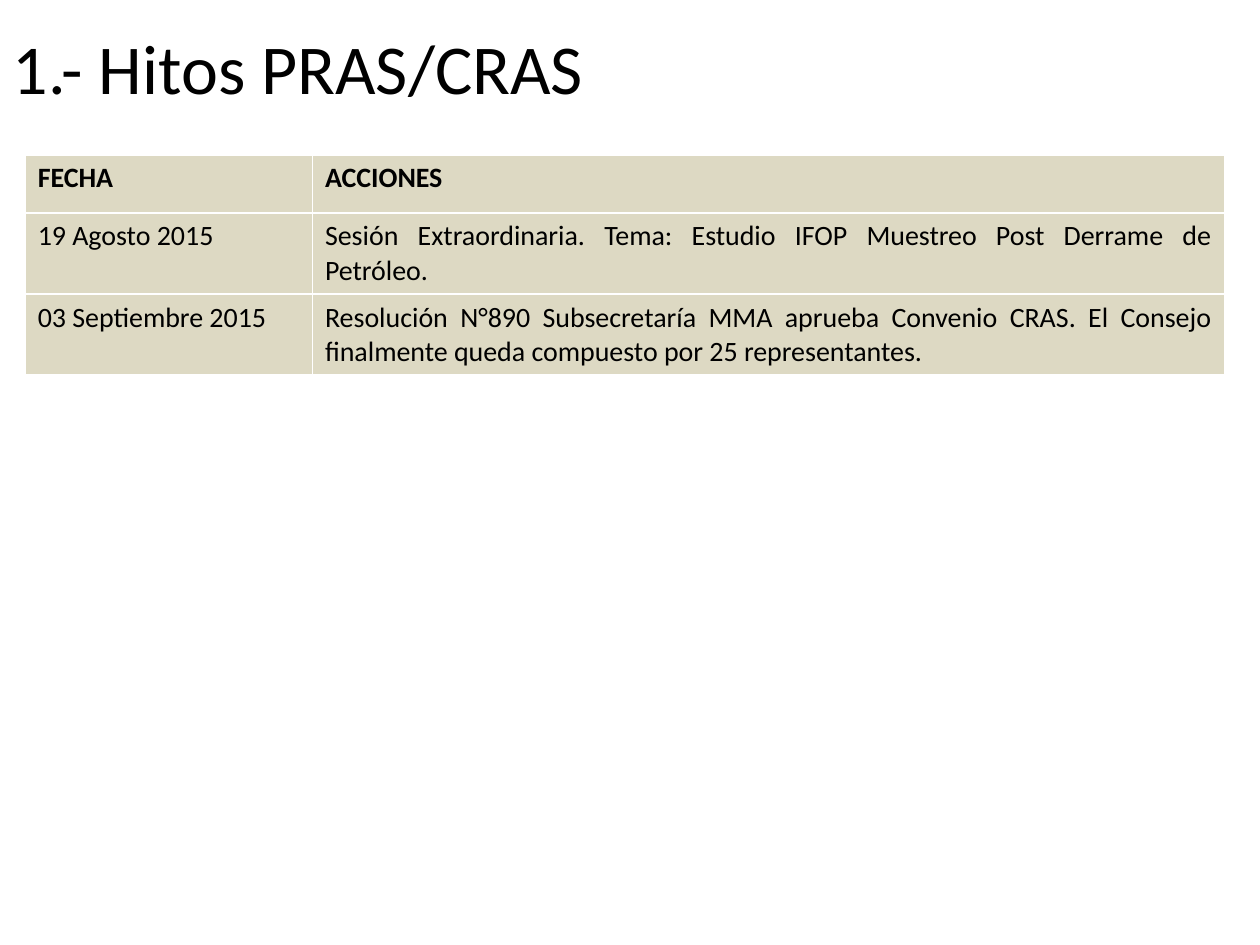
import pptx
import pptx.util
import pptx.dml.color
import pptx.enum.text

Inches = pptx.util.Inches
ALIGN = pptx.enum.text.PP_ALIGN
MIDDLE = pptx.enum.text.MSO_ANCHOR.MIDDLE
BLACK = pptx.dml.color.RGBColor(0x00, 0x00, 0x00)
SAND = pptx.dml.color.RGBColor(0xDD, 0xD9, 0xC3)


def write(frame, text, size=16, bold=False, align=ALIGN.LEFT):
    para = frame.paragraphs[0]
    para.alignment = align
    run = para.add_run()
    run.text = text
    font = run.font
    font.name = "Calibri"
    font.size = pptx.util.Pt(size)
    font.bold = bold
    font.color.rgb = BLACK


deck = pptx.Presentation()
deck.slide_width, deck.slide_height = Inches(10), Inches(7.5)
slide = deck.slides.add_slide(deck.slide_layouts[5])

# Title
title = slide.shapes.title
title.left, title.top = Inches(0), Inches(0.13)
title.width, title.height = Inches(7.76), Inches(0.79)
title.text_frame.vertical_anchor = MIDDLE
write(title.text_frame, "1.- Hitos PRAS/CRAS", size=40)

# Milestone table: the default style gives the white rules
rows = [
    ("FECHA", "ACCIONES"),
    ("19 Agosto 2015",
     "Sesión Extraordinaria. Tema: Estudio IFOP Muestreo Post Derrame de Petróleo."),
    ("03 Septiembre 2015",
     "Resolución N°890 Subsecretaría MMA aprueba Convenio CRAS. "
     "El Consejo finalmente queda compuesto por 25 representantes."),
]
widths = [2.28, 7.24]
heights = [0.46, 0.64, 0.64]
table = slide.shapes.add_table(
    len(rows), len(widths), Inches(0.2), Inches(1.23),
    Inches(sum(widths)), Inches(sum(heights))).table
table.horz_banding = False
for col, width in zip(table.columns, widths):
    col.width = Inches(width)

for r, (row, height) in enumerate(zip(rows, heights)):
    table.rows[r].height = Inches(height)
    for c, text in enumerate(row):
        cell = table.cell(r, c)
        cell.fill.solid()
        cell.fill.fore_color.rgb = SAND
        body = r > 0 and c == 1
        write(cell.text_frame, text, bold=r == 0,
              align=ALIGN.JUSTIFY if body else ALIGN.LEFT)

deck.save("out.pptx")
